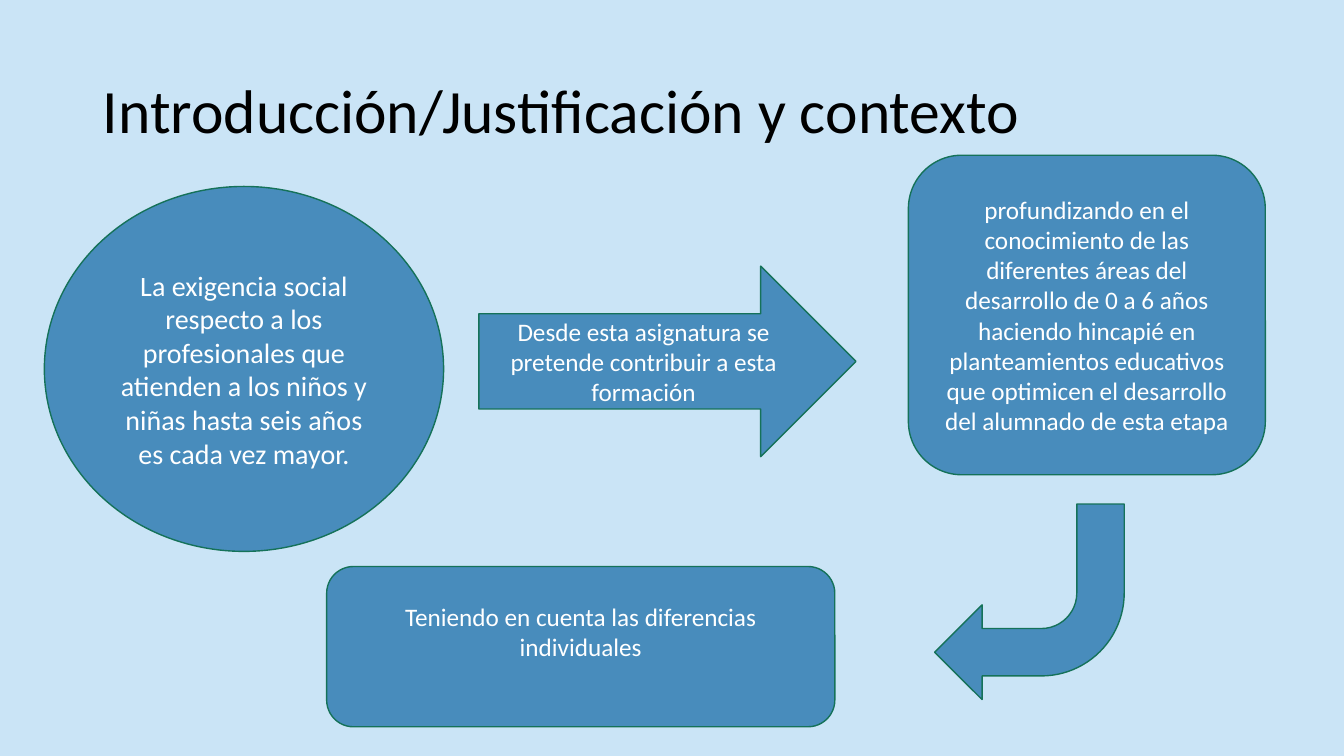
import pptx
import pptx.dml.color
import pptx.enum.shapes
import pptx.enum.text
import pptx.oxml.ns
import pptx.util
from dataclasses import dataclass
from lxml import etree

Inches = pptx.util.Inches
Pt = pptx.util.Pt
Shape = pptx.enum.shapes.MSO_SHAPE
Align = pptx.enum.text.PP_ALIGN
Anchor = pptx.enum.text.MSO_ANCHOR


def rgb(code):
    return pptx.dml.color.RGBColor.from_string(code)


@dataclass(frozen=True)
class Theme:
    font: str = "Calibri"
    background: str = "CAE4F6"
    title_color: str = "000000"
    text_color: str = "FFFFFF"
    fill: str = "1D6FA9"
    fill_opacity: int = 75
    outline: str = "157259"
    outline_width: int = 1
    title_size: int = 44
    lead_size: int = 20
    body_size: int = 18


THEME = Theme()


def write(frame, text, size, color, align):
    frame.text = text
    frame.word_wrap = True
    frame.vertical_anchor = Anchor.MIDDLE
    paragraph = frame.paragraphs[0]
    paragraph.alignment = align
    font = paragraph.runs[0].font
    font.name, font.size = THEME.font, Pt(size)
    font.color.rgb = rgb(color)


def add_title(slide, box, text):
    title = slide.shapes.title
    title.left, title.top, title.width, title.height = map(Inches, box)
    write(title.text_frame, text, THEME.title_size, THEME.title_color, Align.LEFT)
    title.text_frame.auto_size = pptx.enum.text.MSO_AUTO_SIZE.NONE
    title.text_frame.paragraphs[0].line_spacing = 0.9


def add_step(slide, kind, box, text="", size=THEME.body_size):
    """Add one translucent shape of the flow, with its text if it has any."""
    step = slide.shapes.add_shape(kind, *map(Inches, box))
    step.shadow.inherit = False
    step.fill.solid()
    step.fill.fore_color.rgb = rgb(THEME.fill)
    color = step.fill._xPr.find(".//" + pptx.oxml.ns.qn("a:srgbClr"))
    etree.SubElement(color, pptx.oxml.ns.qn("a:alpha"),
                     val=str(THEME.fill_opacity * 1000))
    step.line.color.rgb = rgb(THEME.outline)
    step.line.width = Pt(THEME.outline_width)
    if text:
        write(step.text_frame, text, size, THEME.text_color, Align.CENTER)
    return step


def add_flow(slide, box):
    """Place the chain of ideas, clockwise from the ellipse, within box."""
    left, top, width, height = box
    right, bottom = left + width, top + height

    add_step(slide, Shape.OVAL, (left, top + 0.31, 3.96, 3.62),
             "La exigencia social respecto a los profesionales que atienden a "
             "los niños y niñas hasta seis años es cada vez mayor.",
             THEME.lead_size)
    add_step(slide, Shape.RIGHT_ARROW, (left + 4.31, top + 1.1, 3.74, 1.89),
             "Desde esta asignatura se pretende contribuir a esta formación")
    add_step(slide, Shape.ROUNDED_RECTANGLE, (right - 3.54, top, 3.54, 3.17),
             "profundizando en el conocimiento de las diferentes áreas del "
             "desarrollo de 0 a 6 años haciendo hincapié en planteamientos "
             "educativos que optimicen el desarrollo del alumnado de esta etapa")
    turn = add_step(slide, Shape.BENT_ARROW, (right - 3.28, top + 3.46, 1.88, 1.94))
    turn.rotation = 180
    differences = add_step(
        slide, Shape.ROUNDED_RECTANGLE, (left + 2.8, bottom - 1.59, 5.04, 1.59),
        "Teniendo en cuenta las diferencias individuales")
    differences.text_frame.margin_bottom = Inches(0.35)


def main():
    deck = pptx.Presentation()
    deck.slide_width, deck.slide_height = Inches(13.33), Inches(7.5)
    slide = deck.slides.add_slide(deck.slide_layouts[5])
    slide.background.fill.solid()
    slide.background.fill.fore_color.rgb = rgb(THEME.background)
    add_title(slide, (0.92, 0.4, 11.5, 1.45), "Introducción/Justificación y contexto")
    add_flow(slide, (0.44, 1.54, 12.11, 5.67))
    deck.save("out.pptx")


if __name__ == "__main__":
    main()
